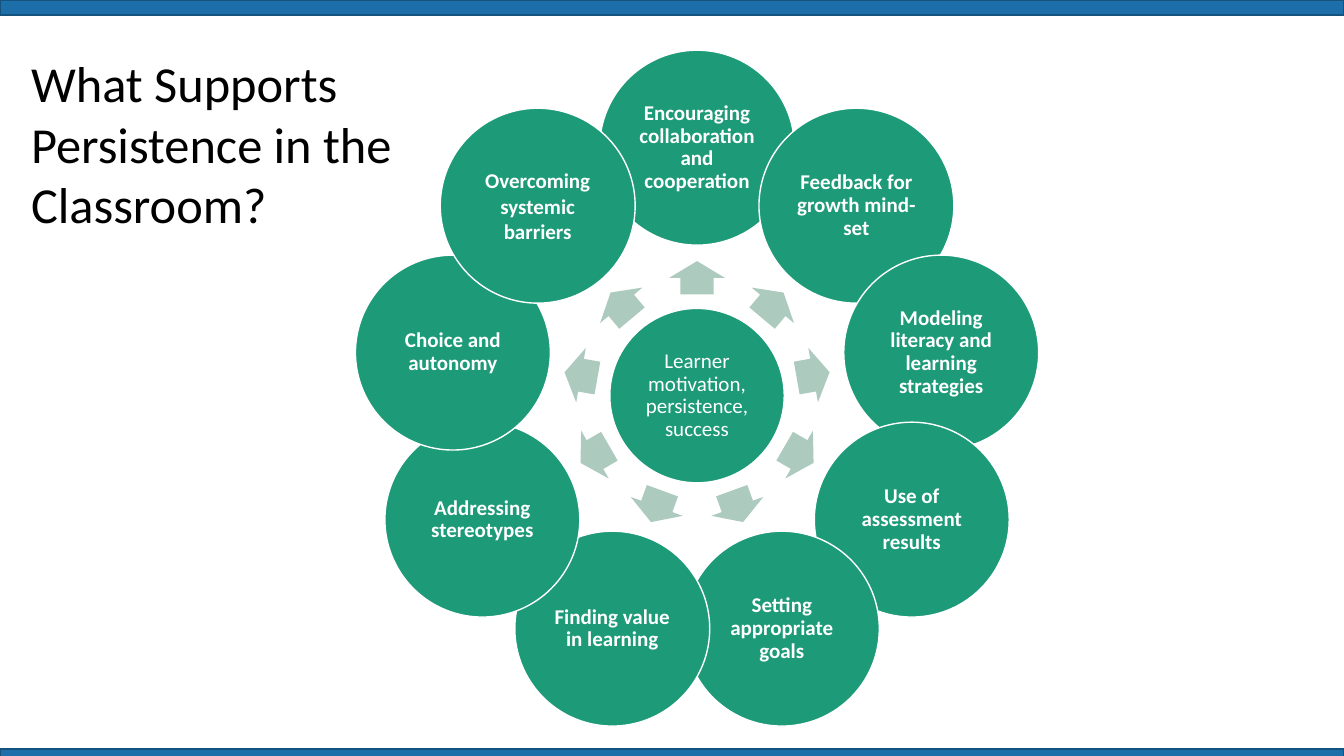
import math

import pptx
import pptx.dml.color
import pptx.enum.shapes
import pptx.enum.text
import pptx.util

Pt = pptx.util.Pt
SHAPE = pptx.enum.shapes.MSO_SHAPE
ALIGN = pptx.enum.text.PP_ALIGN
MIDDLE = pptx.enum.text.MSO_ANCHOR.MIDDLE

# Content
TITLE = "What Supports Persistence in the Classroom?"
HUB = "Learner motivation, persistence, success"
# Clockwise from the top: text, line spacing
SUPPORTS = [
    ("Encouraging collaboration and cooperation", 0.9),
    ("Feedback for growth mind-set", 0.9),
    ("Modeling literacy and learning strategies", 0.9),
    ("Use of assessment results", 0.9),
    ("Setting appropriate goals", 0.9),
    ("Finding value in learning", 0.9),
    ("Addressing stereotypes", 0.9),
    ("Choice and autonomy", 0.9),
    ("Overcoming systemic barriers", 1.0),
]

THEME = {
    "font": "Calibri", "title_size": 36, "label_size": 15,
    "bar": "1D6FA9", "bar_line": "15527D", "circle": "1D9A78",
    "arrow": "ACCABE", "white": "FFFFFF", "black": "000000",
}

# Layout, in points
SLIDE_W, SLIDE_H = 960, 540
BAR_H = 10.8
BAR_TOPS = (535, 0)
CENTER_X, CENTER_Y = 497.9, 282.6
HUB_SIZE, CIRCLE_SIZE = 124.6, 139.2
ARROW_W, ARROW_H = 23.8, 39.5
CIRCLE_ORBIT, ARROW_ORBIT = 177.1, 84.2


def color(name):
    return pptx.dml.color.RGBColor.from_string(THEME[name])


def add_shape(kind, x, y, w, h, fill, line=None):
    s = slide.shapes.add_shape(kind, Pt(x), Pt(y), Pt(w), Pt(h))
    s.shadow.inherit = False
    s.fill.solid()
    s.fill.fore_color.rgb = color(fill)
    if line:
        s.line.color.rgb = color(line)
        s.line.width = Pt(1)
    else:
        s.line.fill.background()
    return s


def set_text(s, text, size, ink, bold=False):
    tf = s.text_frame
    tf.word_wrap = True
    tf.vertical_anchor = MIDDLE
    p = tf.paragraphs[0]
    p.text = text
    p.font.name = THEME["font"]
    p.font.size = Pt(THEME[size])
    p.font.bold = bold
    p.font.color.rgb = color(ink)
    return tf, p


def add_circle(cx, cy, size, text, spacing, bold):
    s = add_shape(SHAPE.OVAL, cx - size / 2, cy - size / 2, size, size,
                  "circle", "white")
    tf, p = set_text(s, text, "label_size", "white", bold)
    tf.margin_left = tf.margin_right = Pt(1.5)
    tf.margin_top = tf.margin_bottom = Pt(1.5)
    p.alignment = ALIGN.CENTER
    p.line_spacing = spacing


def on_orbit(radius, degrees):
    angle = math.radians(degrees)
    return (CENTER_X + radius * math.cos(angle),
            CENTER_Y + radius * math.sin(angle))


prs = pptx.Presentation()
prs.slide_width, prs.slide_height = Pt(SLIDE_W), Pt(SLIDE_H)
slide = prs.slides.add_slide(prs.slide_layouts[6])

# Bars along the bottom and top edges
for top in BAR_TOPS:
    add_shape(SHAPE.RECTANGLE, 0, top, SLIDE_W, BAR_H, "bar", "bar_line")

# Title
title = slide.shapes.add_textbox(Pt(15.1), Pt(7.2), Pt(319), Pt(190))
set_text(title, TITLE, "title_size", "black")

# Hub, then an arrow and a circle for each support
add_circle(CENTER_X, CENTER_Y, HUB_SIZE, HUB, 0.9, False)
for i, (text, spacing) in enumerate(SUPPORTS):
    degrees = 360 * i / len(SUPPORTS) - 90
    x, y = on_orbit(ARROW_ORBIT, degrees)
    arrow = add_shape(SHAPE.RIGHT_ARROW, x - ARROW_W / 2, y - ARROW_H / 2,
                      ARROW_W, ARROW_H, "arrow")
    arrow.adjustments[0], arrow.adjustments[1] = 0.6, 0.5
    arrow.rotation = degrees % 360
    x, y = on_orbit(CIRCLE_ORBIT, degrees)
    add_circle(x, y, CIRCLE_SIZE, text, spacing, True)

prs.save("out.pptx")
